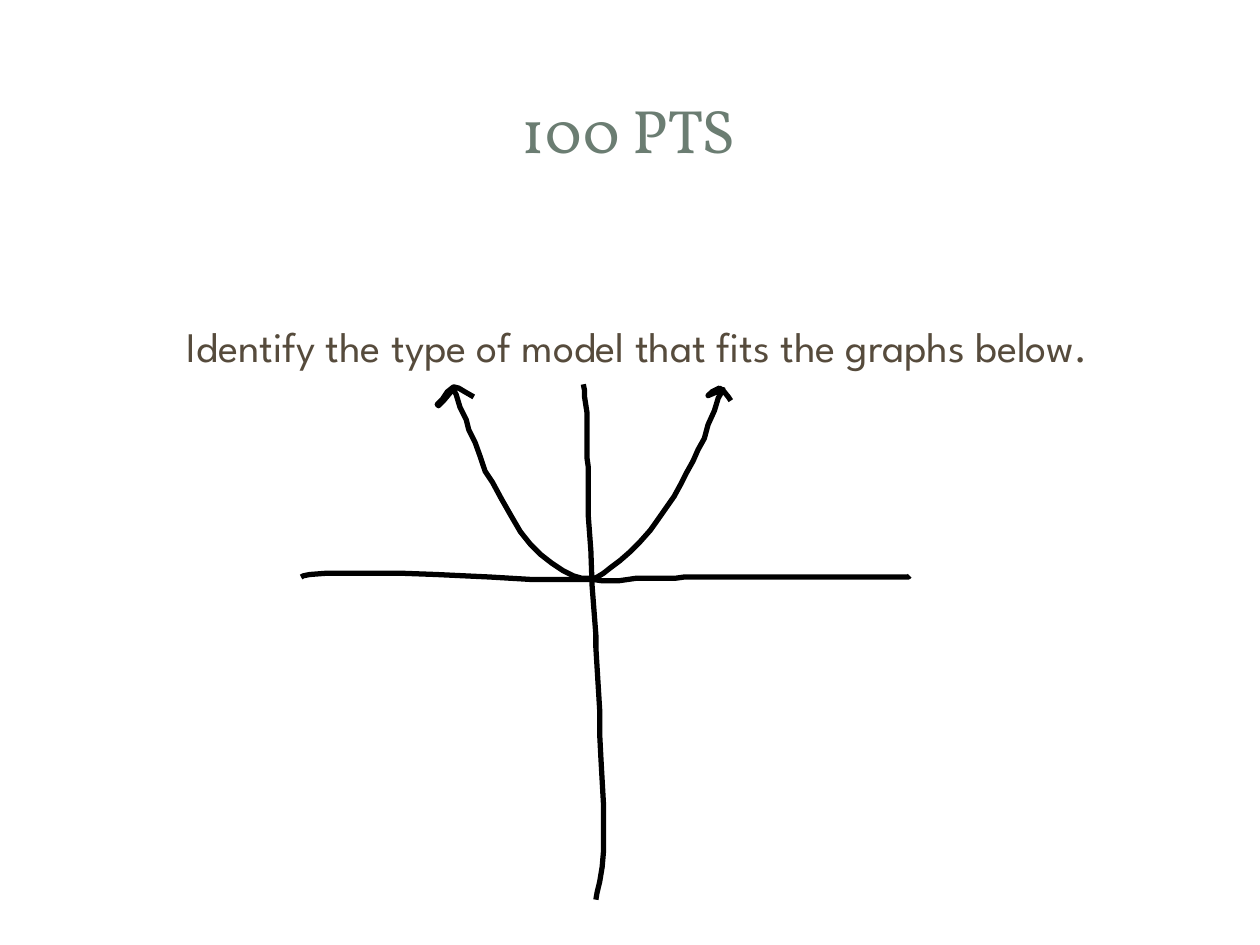
from dataclasses import dataclass

from pptx import Presentation
from pptx.dml.color import RGBColor
from pptx.enum.text import MSO_ANCHOR, MSO_AUTO_SIZE, PP_ALIGN
from pptx.oxml.xmlchemy import OxmlElement
from pptx.util import Inches, Pt


@dataclass(frozen=True)
class Theme:
    title_font: str = "Vollkorn"
    body_font: str = "League Spartan"
    title_color: RGBColor = RGBColor(0x6B, 0x7D, 0x72)
    body_color: RGBColor = RGBColor(0x56, 0x4B, 0x3C)
    ink: RGBColor = RGBColor(0, 0, 0)
    title_size: Pt = Pt(35)
    body_size: Pt = Pt(24)
    stroke: Pt = Pt(3)


THEME = Theme()

# Pen strokes, as points in hundredths of an inch on the slide.
Y_AXIS = [
    (463, 305), (464, 310), (464, 315), (466, 328), (466, 364), (467, 371),
    (467, 410), (469, 437), (470, 465), (473, 504), (473, 514), (476, 563),
    (476, 582), (477, 602), (479, 638), (479, 676), (478, 688), (476, 700),
    (474, 708), (473, 714),
]
X_AXIS = [
    (239, 458), (241, 457), (246, 456), (259, 455), (319, 455), (346, 456),
    (367, 457), (389, 458), (422, 460), (471, 460), (478, 461), (491, 461),
    (505, 459), (536, 459), (543, 458), (721, 458), (722, 457),
]
RIGHT_BRANCH = [
    (469, 460), (474, 458), (479, 455), (484, 451), (492, 445), (500, 438),
    (508, 430), (516, 421), (521, 414), (528, 404), (535, 394), (541, 383),
    (545, 375), (550, 366), (554, 357), (559, 348), (562, 337), (567, 326),
    (570, 316), (574, 309),
]
RIGHT_TIP = [
    (569, 311), (562, 314), (565, 311), (571, 308), (574, 310), (578, 315),
    (580, 318),
]
LEFT_BRANCH = [
    (469, 459), (462, 459), (455, 457), (447, 453), (438, 447), (429, 440),
    (421, 432), (413, 422), (406, 410), (398, 396), (391, 383), (385, 374),
    (381, 362), (377, 351), (372, 341), (370, 333), (365, 323), (362, 313),
    (359, 308),
]
LEFT_TIP = [
    (357, 312), (352, 318), (348, 322), (347, 321), (351, 317), (355, 311),
    (360, 307), (364, 308), (369, 311), (376, 315),
]


def place(placeholder, left, top, width, height):
    placeholder.left, placeholder.top = Inches(left), Inches(top)
    placeholder.width, placeholder.height = Inches(width), Inches(height)


def write_centred(frame, wording, font_name, size, color):
    frame.word_wrap = True
    frame.auto_size = MSO_AUTO_SIZE.NONE
    paragraph = frame.paragraphs[0]
    paragraph.alignment = PP_ALIGN.CENTER
    paragraph.space_before = Pt(0)
    run = paragraph.add_run()
    run.text = wording
    run.font.name = font_name
    run.font.size = size
    run.font.color.rgb = color
    return paragraph


def add_title(slide, wording):
    title = slide.shapes.title
    place(title, 0.47, 0.45, 9.03, 1.14)
    title.text_frame.vertical_anchor = MSO_ANCHOR.MIDDLE
    write_centred(title.text_frame, wording, THEME.title_font,
                  THEME.title_size, THEME.title_color)


def add_question(slide, wording):
    question = slide.placeholders[1]
    place(question, 0.5, 1.92, 9, 4.78)
    frame = question.text_frame
    frame.vertical_anchor = MSO_ANCHOR.TOP
    frame.margin_top = Inches(0.62)
    paragraph = write_centred(frame, wording, THEME.body_font,
                              THEME.body_size, THEME.body_color)
    properties = paragraph._p.get_or_add_pPr()
    properties.set("marL", str(Inches(0.12)))
    properties.set("indent", "0")
    properties.append(OxmlElement("a:buNone"))


def draw_stroke(slide, points):
    builder = slide.shapes.build_freeform(*points[0], scale=Inches(0.01))
    builder.add_line_segments(points[1:], close=False)
    stroke = builder.convert_to_shape()
    stroke.shadow.inherit = False
    stroke.fill.background()
    stroke.line.color.rgb = THEME.ink
    stroke.line.width = THEME.stroke


def main():
    deck = Presentation()
    deck.slide_width, deck.slide_height = Inches(10), Inches(7.5)
    slide = deck.slides.add_slide(deck.slide_layouts[1])
    add_title(slide, "100 PTS")
    add_question(slide, "Identify the type of model that fits the graphs below.")
    for points in (Y_AXIS, X_AXIS, RIGHT_BRANCH + RIGHT_TIP,
                   LEFT_BRANCH + LEFT_TIP):
        draw_stroke(slide, points)
    deck.save("out.pptx")


if __name__ == "__main__":
    main()
